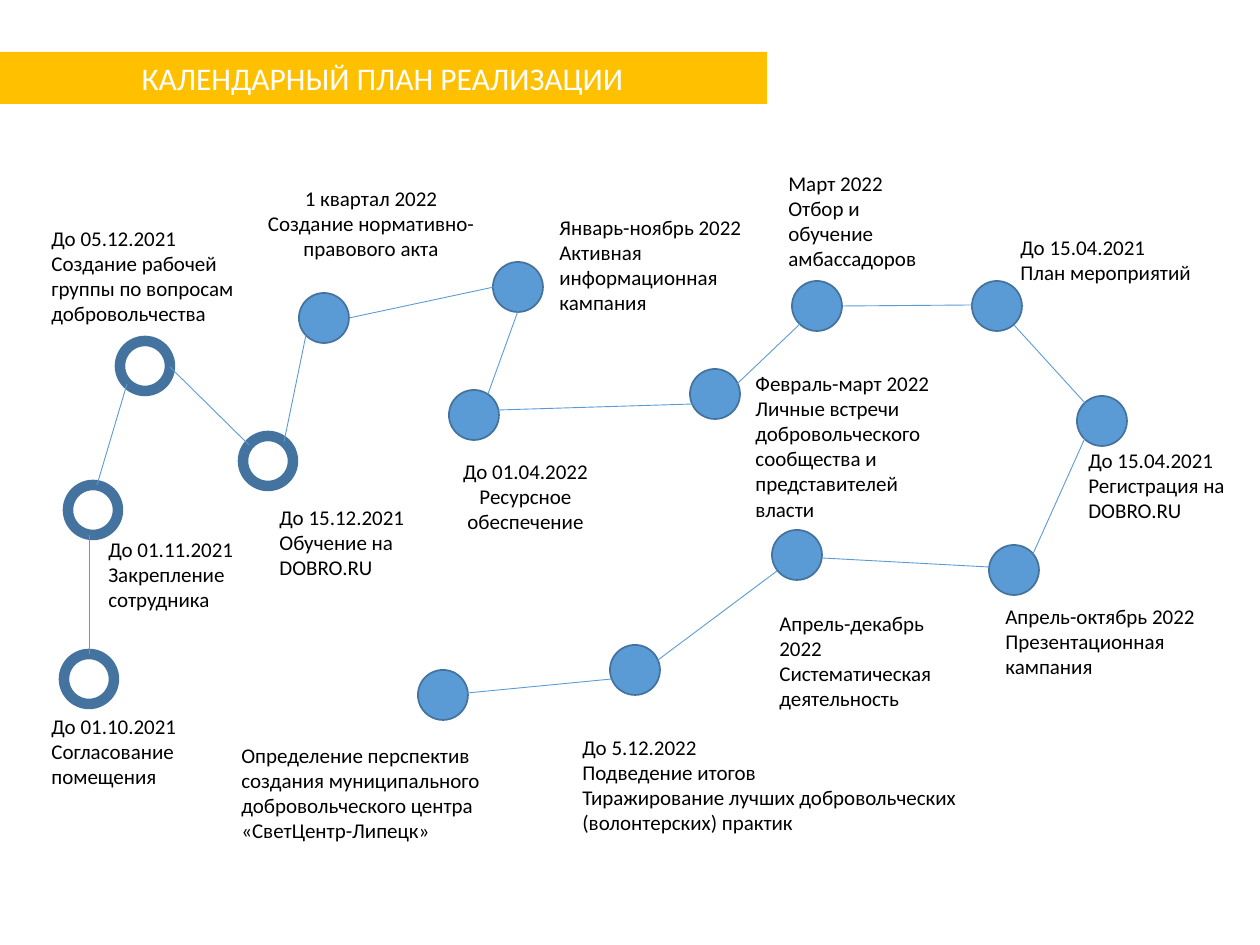
"""Build the calendar plan slide: a winding path of milestones with captions."""
from pptx import Presentation
from pptx.dml.color import RGBColor
from pptx.enum.shapes import MSO_CONNECTOR, MSO_SHAPE
from pptx.enum.text import MSO_ANCHOR, MSO_AUTO_SIZE, PP_ALIGN
from pptx.oxml.ns import qn
from pptx.util import Pt

EMU_PER_PX = 914400 / 126
LEFT, CENTER = PP_ALIGN.LEFT, PP_ALIGN.CENTER
MIDDLE = MSO_ANCHOR.MIDDLE
GROW = MSO_AUTO_SIZE.SHAPE_TO_FIT_TEXT
OVAL, RECTANGLE = MSO_SHAPE.OVAL, MSO_SHAPE.RECTANGLE
STRAIGHT = MSO_CONNECTOR.STRAIGHT

COLORS = {"band": "FFC000", "dot": "5B9BD5", "edge": "43739E",
          "white": "FFFFFF", "text": "000000"}
FORMATS = {
    "title": {"name": "Calibri", "size": Pt(18)},
    "caption": {"name": "Calibri", "size": Pt(12)},
}
DIAMETER = 50

DONE = [(89, 679), (93, 510), (145, 366), (268, 461)]
PLANNED = [(324, 318), (518, 287), (474, 415), (715, 394), (817, 306), (997, 306),
           (1102, 421), (1014, 570), (797, 555), (635, 670), (443, 695)]
LINKS = [
    (89, 654, 89, 535), (97, 485, 127, 384), (170, 367, 249, 445),
    (284, 442, 306, 335), (349, 318, 494, 287), (518, 311, 488, 394),
    (498, 410, 693, 404), (737, 384, 800, 324), (843, 306, 973, 305),
    (1014, 325, 1085, 403), (1085, 438, 1033, 554), (989, 567, 822, 558),
    (777, 571, 658, 660), (612, 679, 467, 693),
]
CAPTIONS = [
    ((39, 707, 170, 89), ["До 01.10.2021", "Согласование помещения"]),
    ((96, 530, 178, 89), ["До 01.11.2021", "Закрепление сотрудника"]),
    ((39, 219, 234, 115), ["До 05.12.2021",
                           "Создание рабочей группы по вопросам добровольчества"]),
    ((267, 498, 222, 89), ["До 15.12.2021", "Обучение на DOBRO.RU"]),
    ((547, 208, 207, 140), ["Январь-ноябрь 2022", "Активная информационная кампания"]),
    ((743, 364, 222, 165), ["Февраль-март 2022",
                            "Личные встречи добровольческого сообщества "
                            "и представителей власти"]),
    ((776, 164, 166, 115), ["Март 2022", "Отбор и обучение амбассадоров"]),
    ((1008, 228, 198, 63), ["До 15.04.2021", "План мероприятий"]),
    ((1076, 441, 200, 89), ["До 15.04.2021", "Регистрация на DOBRO.RU"]),
    ((993, 597, 217, 89), ["Апрель-октябрь 2022", "Презентационная кампания"]),
    ((767, 604, 202, 115), ["Апрель-декабрь 2022", "Систематическая деятельность"]),
    ((570, 728, 445, 115), ["До 5.12.2022", "Подведение итогов",
                            "Тиражирование лучших добровольческих "
                            "(волонтерских) практик"]),
    ((229, 736, 339, 115), ["Определение перспектив создания муниципального "
                            "добровольческого центра «СветЦентр-Липецк»"]),
]
CENTERED_CAPTIONS = [
    ((249, 179, 244, 89), ["1 квартал 2022", "Создание нормативно-правового акта"]),
    ((421, 452, 209, 89), ["До 01.04.2022", "Ресурсное обеспечение"]),
]


def scaled(*lengths):
    return [round(length * EMU_PER_PX) for length in lengths]


def color(name):
    return RGBColor.from_string(COLORS[name])


class Painter:
    """Holds the slide style and the current page."""

    def __init__(self, page):
        self.page = page

    def fill_text(self, frame, lines, style, ink, align):
        for index, line in enumerate(lines):
            para = frame.add_paragraph() if index else frame.paragraphs[0]
            para.alignment = align
            span = para.add_run()
            span.text = line
            for key, value in FORMATS[style].items():
                setattr(span.font, key, value)
            span.font.color.rgb = color(ink)

    def shape(self, kind, place, fill, edge=None, weight=1):
        shape = self.page.shapes.add_shape(kind, *scaled(*place))
        shape.shadow.inherit = False
        shape.fill.solid()
        shape.fill.fore_color.rgb = color(fill)
        if edge:
            shape.line.color.rgb = color(edge)
            shape.line.width = Pt(weight)
        else:
            shape.line.fill.background()
        return shape

    def title(self, place, text):
        band = self.shape(RECTANGLE, place, "band")
        band.text_frame.vertical_anchor = MIDDLE
        self.fill_text(band.text_frame, [text], "title", "white", CENTER)

    def milestone(self, center, fill, weight):
        left, top = (value - DIAMETER // 2 for value in center)
        self.shape(OVAL, (left, top, DIAMETER, DIAMETER), fill, "edge", weight)

    def link(self, ends):
        line = self.page.shapes.add_connector(STRAIGHT, *scaled(*ends))
        line.line.color.rgb = color("dot")
        line.line.width = Pt(0.5)
        properties = line._element.spPr
        properties.append(properties.makeelement(qn("a:effectLst"), {}))

    def caption(self, place, lines, align=LEFT):
        box = self.page.shapes.add_textbox(*scaled(*place))
        box.text_frame.word_wrap = True
        box.text_frame.auto_size = GROW
        self.fill_text(box.text_frame, lines, "caption", "text", align)


def main():
    deck = Presentation()
    deck.slide_width, deck.slide_height = scaled(1260, 945)
    painter = Painter(deck.slides.add_slide(deck.slide_layouts[6]))
    for center in DONE:
        painter.milestone(center, "white", 6)
    for center in PLANNED:
        painter.milestone(center, "dot", 1)
    for ends in LINKS:
        painter.link(ends)
    for place, lines in CAPTIONS:
        painter.caption(place, lines)
    for place, lines in CENTERED_CAPTIONS:
        painter.caption(place, lines, CENTER)
    painter.title((-2, 52, 769, 52), "КАЛЕНДАРНЫЙ ПЛАН РЕАЛИЗАЦИИ")
    deck.save("out.pptx")


if __name__ == "__main__":
    main()
